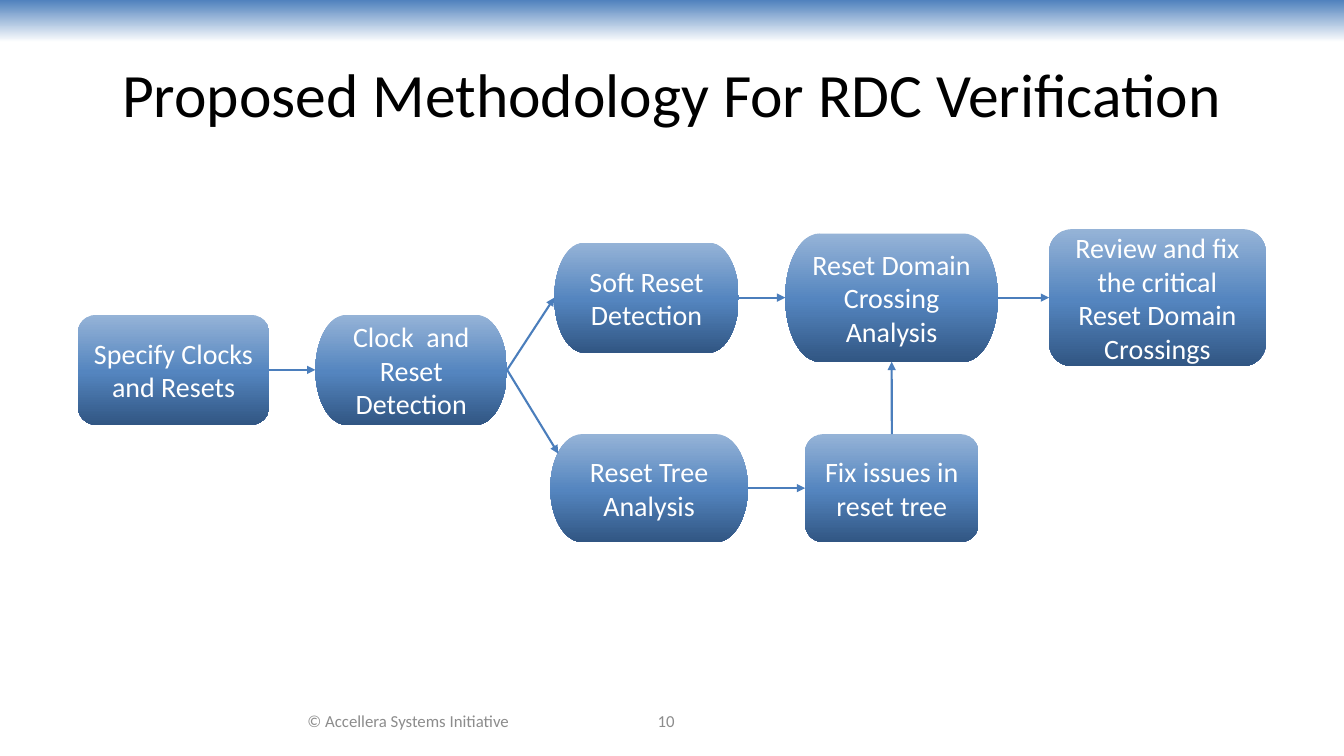
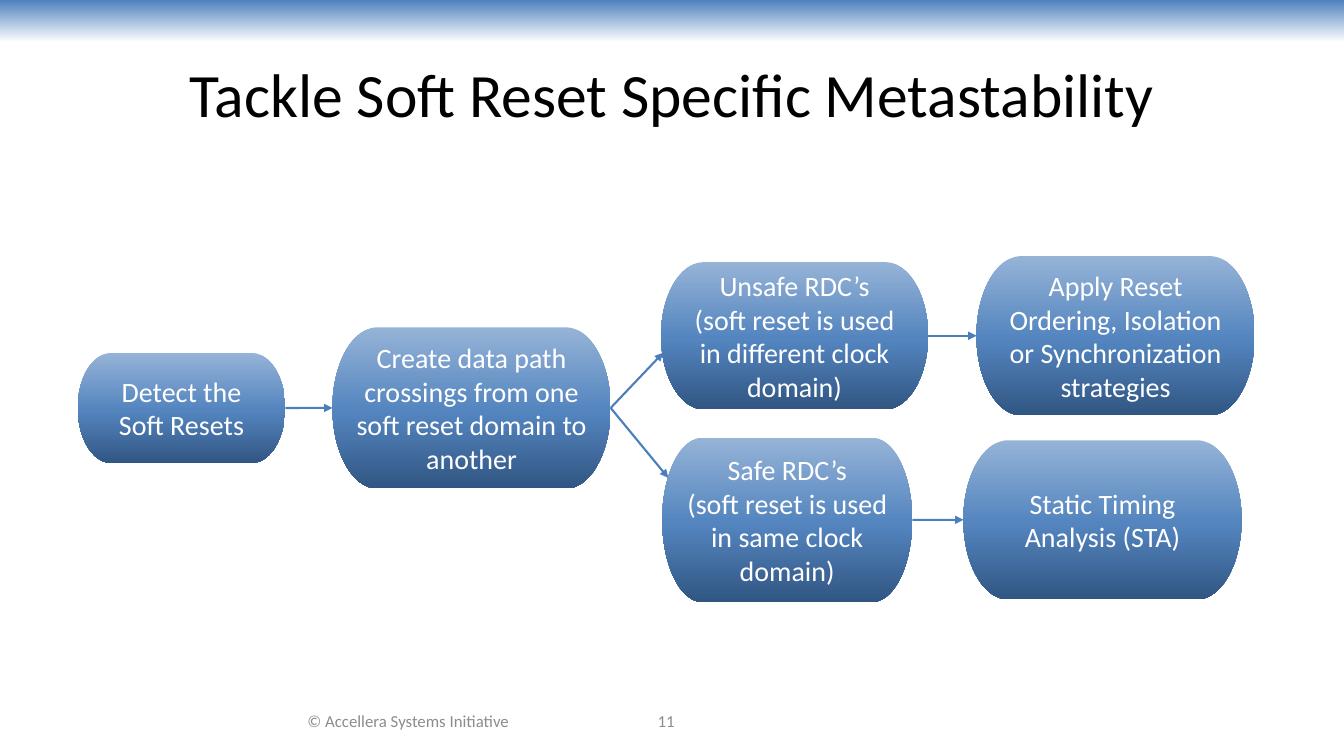
from copy import deepcopy
from dataclasses import dataclass

from lxml import etree
from pptx import Presentation
from pptx.dml.color import RGBColor
from pptx.enum.shapes import MSO_CONNECTOR, MSO_SHAPE
from pptx.enum.text import MSO_ANCHOR, PP_ALIGN
from pptx.oxml.ns import qn
from pptx.util import Cm, Pt

RECT = MSO_SHAPE.RECTANGLE
ROUND = MSO_SHAPE.ROUNDED_RECTANGLE
PILL = MSO_SHAPE.FLOWCHART_TERMINATOR
LINE = MSO_CONNECTOR.STRAIGHT
MIDDLE = MSO_ANCHOR.MIDDLE
CENTER = PP_ALIGN.CENTER
TOP, LEFT, BOTTOM, RIGHT = range(4)


@dataclass(frozen=True)
class Theme:
    font: str = "Calibri"
    ink: str = "000000"
    light: str = "FFFFFF"
    grey: str = "8C8C8C"
    wire: str = "4B7EBC"
    band: tuple = ((0, "4F81BD"), (1, "FFFFFF"))
    node: tuple = ((0, "95B3D7"), (0.52, "5485BF"), (1, "315683"))
    title: int = 44
    body: int = 20
    small: int = 12
    stroke: float = 1.5


class Deck:
    def __init__(self, theme):
        self.theme = theme
        self.show = Presentation()
        self.show.slide_width = Cm(33.87)
        self.show.slide_height = Cm(19.05)
        self.slide = None

    def page(self, title, number):
        theme = self.theme
        self.slide = self.show.slides.add_slide(self.show.slide_layouts[6])
        self.shape(RECT, 0, 0, 33.87, 1.07, theme.band)
        self.label(title, 1.7, 0.76, 30.48, 3.18, theme.title, theme.ink)
        foot = ("© Accellera Systems Initiative", 6.2, 8.18), (number, 13.54, 6.5)
        for text, left, width in foot:
            self.label(text, left, 17.65, width, 1.02, theme.small, theme.grey)

    def shape(self, kind, left, top, width, height, stops):
        shape = self.slide.shapes.add_shape(
            kind, Cm(left), Cm(top), Cm(width), Cm(height))
        shape.shadow.inherit = False
        shape.line.fill.background()
        fill = shape.fill
        fill.gradient()
        fill.gradient_angle = 270
        ramp = shape.element.spPr.find(qn("a:gradFill")).find(qn("a:gsLst"))
        while len(ramp) < len(stops):
            ramp.append(deepcopy(ramp[-1]))
        for stop, (place, color) in zip(fill.gradient_stops, stops):
            stop.position = place
            stop.color.rgb = RGBColor.from_string(color)
        return shape

    def set_text(self, frame, lines, size, color):
        frame.word_wrap = True
        frame.vertical_anchor = MIDDLE
        for index, line in enumerate(lines):
            para = frame.add_paragraph() if index else frame.paragraphs[0]
            para.alignment = CENTER
            run = para.add_run()
            run.text = line
            run.font.name = self.theme.font
            run.font.size = Pt(size)
            run.font.color.rgb = RGBColor.from_string(color)

    def label(self, text, left, top, width, height, size, color):
        box = self.slide.shapes.add_textbox(
            Cm(left), Cm(top), Cm(width), Cm(height))
        self.set_text(box.text_frame, [text], size, color)

    def node(self, kind, left, mid, width, height, *lines):
        theme = self.theme
        shape = self.shape(
            kind, left, mid - height / 2, width, height, theme.node)
        self.set_text(shape.text_frame, lines, theme.body, theme.light)
        return shape

    def arrow(self, start, end, out=RIGHT, into=LEFT, point=(0, 0)):
        x, y = point
        wire = self.slide.shapes.add_connector(LINE, 0, 0, Cm(x), Cm(y))
        wire.begin_connect(start, out)
        if end is not None:
            wire.end_connect(end, into)
        wire.line.color.rgb = RGBColor.from_string(self.theme.wire)
        wire.line.width = Pt(self.theme.stroke)
        props = wire.element.spPr
        etree.SubElement(props.find(qn("a:ln")), qn("a:tailEnd"), type="triangle")
        etree.SubElement(props, qn("a:effectLst"))


def method(deck):
    deck.page("Proposed Methodology For RDC Verification", "10")
    mid, high, low = 9.32, 7.5, 12.3
    setup = deck.node(ROUND, 1.96, mid, 4.83, 2.77,
                      "Specify Clocks", "and Resets")
    clock = deck.node(PILL, 7.95, mid, 4.83, 2.77,
                      "Clock  and Reset Detection")
    soft = deck.node(PILL, 13.97, high, 4.65, 2.77, "Soft Reset Detection")
    tree = deck.node(PILL, 13.87, low, 4.98, 2.72, "Reset Tree Analysis")
    cross = deck.node(PILL, 19.79, high, 5.36, 3.23,
                      "Reset Domain Crossing Analysis")
    review = deck.node(ROUND, 26.44, high, 5.46, 3.45,
                       "Review and fix the critical Reset Domain Crossings")
    fix = deck.node(ROUND, 20.29, low, 4.37, 2.72, "Fix issues in reset tree")
    pairs = ((setup, clock), (clock, soft), (soft, cross),
             (cross, review), (tree, fix))
    for start, end in pairs:
        deck.arrow(start, end)
    deck.arrow(clock, None, point=(14.07, 11.43))
    deck.arrow(fix, cross, TOP, BOTTOM)


def tackle(deck):
    deck.page("Tackle Soft Reset Specific Metastability", "11")
    mid, high, low = 10.28, 8.46, 13.1
    detect = deck.node(PILL, 1.96, mid, 5.23, 2.77, "Detect the Soft Resets")
    create = deck.node(
        PILL, 8.38, mid, 7.01, 4.06,
        "Create data path crossings from one soft reset domain to another")
    unsafe = deck.node(PILL, 16.66, high, 6.73, 3.71, "Unsafe RDC’s",
                       "(soft reset is used in different clock domain)")
    order = deck.node(
        PILL, 24.61, high, 7.01, 4.01,
        "Apply Reset Ordering, Isolation or Synchronization strategies")
    safe = deck.node(PILL, 16.69, low, 6.3, 4.14, "Safe RDC’s",
                     "(soft reset is used in same clock domain)")
    timing = deck.node(PILL, 24.28, low, 7.01, 4.01,
                       "Static Timing Analysis (STA)")
    for start, end in ((detect, create), (unsafe, order), (safe, timing)):
        deck.arrow(start, end)
    for point in ((16.71, 8.89), (16.84, 12.04)):
        deck.arrow(create, None, point=point)


def main():
    deck = Deck(Theme())
    method(deck)
    tackle(deck)
    deck.show.save("out.pptx")


if __name__ == "__main__":
    main()
